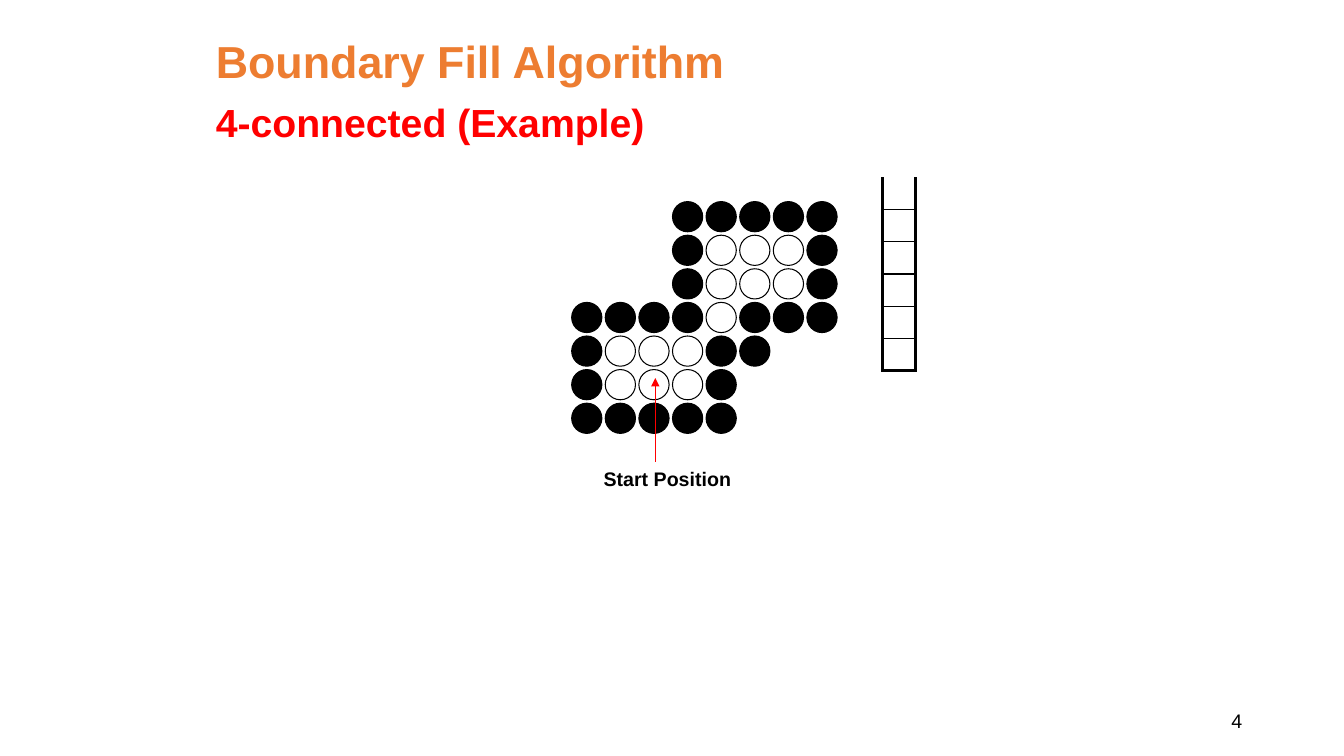
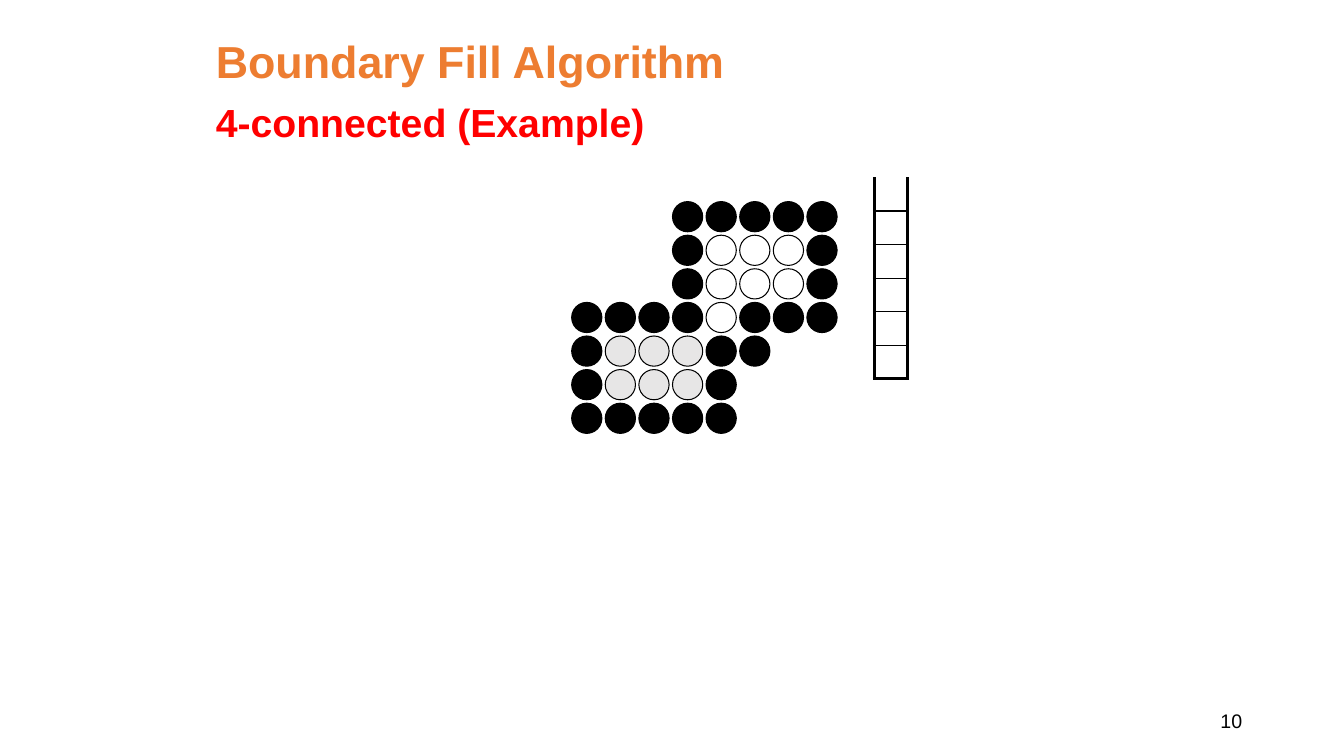
from lxml import etree
from pptx import Presentation
from pptx.dml.color import RGBColor
from pptx.enum import shapes, text
from pptx.oxml import ns
from pptx.util import Inches, Pt

INK = {"black": "000000", "orange": "ED7D31", "red": "FF0000", "grey": "E7E6E6"}
FONT = "Arial"
STEP = 1 / 3
SIZE = 0.3

# '#' is the boundary, 'o' the upper region, 's' the region of the start pixel
GRID = [
    "   #####",
    "   #ooo#",
    "   #ooo#",
    "####o###",
    "#sss##",
    "#sss#",
    "#####",
]
HEADS = [("Boundary Fill Algorithm", 32, "orange", 0),
         ("4-connected (Example)", 28, "red", 5)]
PAGES = [
    dict(num="4", fills={"#": "black"}, left=8.75, row=0.32, start=True),
    dict(num="10", fills={"#": "black", "s": "grey"}, left=8.67, row=STEP, start=False),
]


def style(para, size, ink, bold, align):
    para.font.name, para.font.size, para.font.bold = FONT, Pt(size), bold
    para.font.color.rgb = RGBColor.from_string(INK[ink])
    para.alignment = align


def add(parent, tag, **attrs):
    """Append a DrawingML element and return it."""
    return etree.SubElement(parent, ns.qn(tag), attrs)


prs = Presentation()
prs.slide_width, prs.slide_height = Inches(13.33), Inches(7.5)

for page in PAGES:
    slide = prs.slides.add_slide(prs.slide_layouts[5])

    # Title
    title = slide.shapes.title
    title.left, title.top = Inches(2.04), Inches(0.25)
    title.width, title.height = Inches(9.25), Inches(1.17)
    frame = title.text_frame
    frame.auto_size = text.MSO_AUTO_SIZE.NONE
    frame.vertical_anchor = text.MSO_ANCHOR.TOP
    frame.text = "\n".join(head[0] for head in HEADS)
    for para, (_, size, ink, gap) in zip(frame.paragraphs, HEADS):
        style(para, size, ink, True, text.PP_ALIGN.LEFT)
        para.line_spacing = 1.07
        para.space_before = Pt(gap)

    # Pixels
    pixels = slide.shapes.add_group_shape()
    for r, line in enumerate(GRID):
        for c, mark in enumerate(line):
            if mark == " ":
                continue
            dot = pixels.shapes.add_shape(
                shapes.MSO_SHAPE.OVAL, Inches(5.67 + c * STEP), Inches(2 + r * STEP),
                Inches(SIZE), Inches(SIZE))
            dot.shadow.inherit = False
            dot.line.color.rgb = RGBColor.from_string(INK["black"])
            dot.line.width = Pt(0.75)
            if mark in page["fills"]:
                dot.fill.solid()
                dot.fill.fore_color.rgb = RGBColor.from_string(INK[page["fills"][mark]])
            else:
                dot.fill.background()

    # Stack, open at the top
    count = 6
    stack = slide.shapes.add_table(
        count, 1, Inches(page["left"]), Inches(1.76),
        Inches(STEP), Inches(count * page["row"])).table
    stack.first_row = stack.horz_banding = False
    for r in range(count):
        cell = stack.cell(r, 0)
        cell.margin_top = cell.margin_bottom = 0
        cell.fill.background()
        edges = {"a:lnL": 2.25, "a:lnR": 2.25, "a:lnT": 1 if r else 0,
                 "a:lnB": 1 if r < count - 1 else 2.25}
        props = cell._tc.get_or_add_tcPr()
        for i, (tag, width) in enumerate(edges.items()):
            edge = add(props, tag, w=str(Pt(width)))
            if width:
                add(add(edge, "a:solidFill"), "a:srgbClr", val=INK["black"])
            else:
                add(edge, "a:noFill")
            props.insert(i, edge)

    # Start label and page number
    labels = [(page["num"], 9.42, 6.95, 3, 0.4, False, text.PP_ALIGN.RIGHT)]
    if page["start"]:
        labels.append(("Start Position", 5.83, 4.58, 1.58, 0.33, True, text.PP_ALIGN.CENTER))
        arrow = slide.shapes.add_connector(
            shapes.MSO_CONNECTOR.STRAIGHT,
            Inches(6.5), Inches(4.58), Inches(6.5), Inches(3.75))
        arrow.line.color.rgb = RGBColor.from_string(INK["red"])
        arrow.line.width = Pt(0.75)
        add(arrow.line._get_or_add_ln(), "a:tailEnd", type="triangle")
        add(arrow._element.spPr, "a:effectLst")
    for words, x, y, w, h, bold, align in labels:
        frame = slide.shapes.add_textbox(Inches(x), Inches(y), Inches(w), Inches(h)).text_frame
        frame.word_wrap = True
        frame.vertical_anchor = text.MSO_ANCHOR.MIDDLE
        frame.text = words
        style(frame.paragraphs[0], 14, "black", bold, align)

prs.save("out.pptx")
